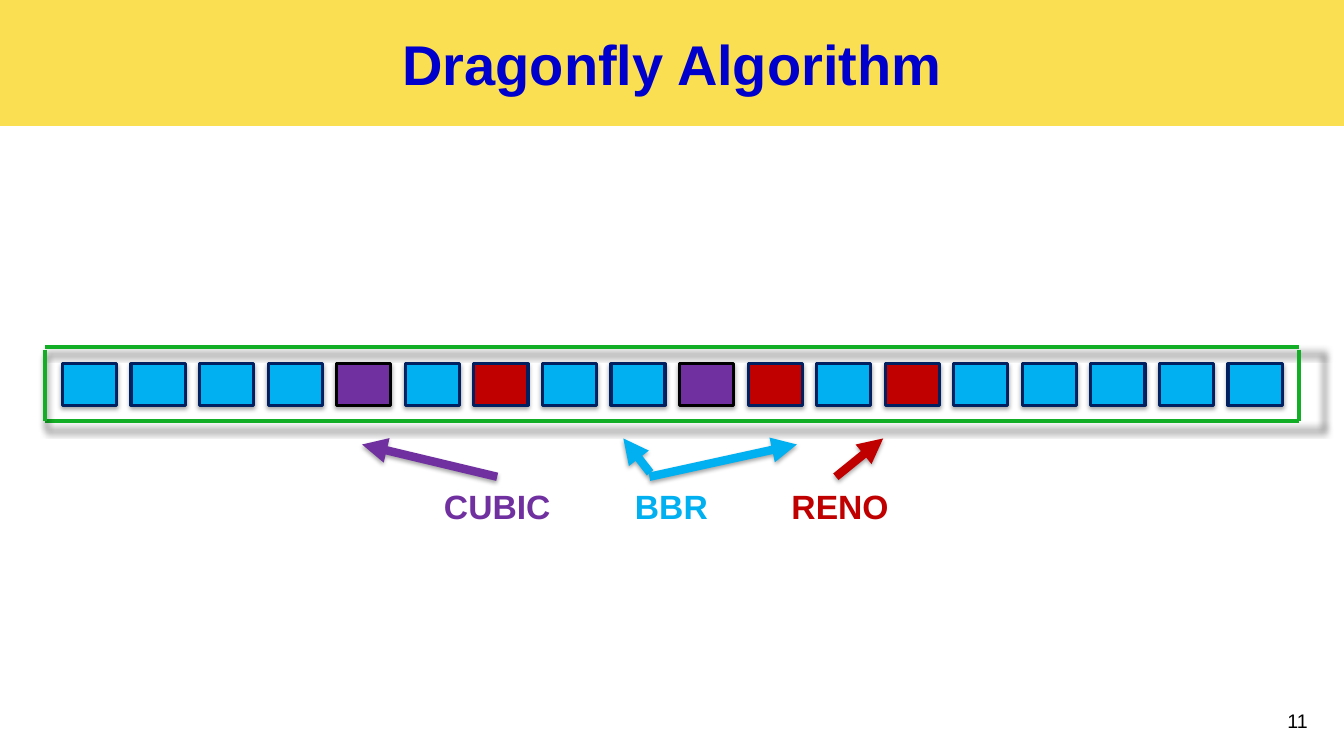
import dataclasses

import pptx
import pptx.dml.color
import pptx.enum.shapes
import pptx.enum.text
import pptx.oxml
import pptx.oxml.ns
import pptx.util


@dataclasses.dataclass(frozen=True)
class Theme:
    font: str = "Arial"
    title_size: int = 40
    label_size: int = 24
    number_size: int = 14
    banner: str = "FBDF53"
    title: str = "0000CC"
    number: str = "000000"
    frame: str = "12AE25"
    bbr: str = "00B0F0"
    cubic: str = "7030A0"
    reno: str = "C00000"
    outline: str = "002060"
    cubic_outline: str = "000000"
    frame_width: float = 3
    packet_width: float = 2.25
    arrow_width: float = 6


THEME = Theme()
SLIDE_WIDTH, SLIDE_HEIGHT = 13.33, 7.5

# One column is one packet with its gap; column 0 starts at the first packet.
GRID_LEFT, COLUMN, ROW = 0.62, 0.68, 0.5

DROP_SHADOW = ('blurRad="40000" dist="23000" dir="5400000" rotWithShape="0"', 35000)
FRAME_SHADOW = ('blurRad="63500" sx="102000" sy="102000" algn="ctr" rotWithShape="0"', 40000)


def color(code):
    return pptx.dml.color.RGBColor.from_string(code)


def x(column):
    return pptx.util.Inches(GRID_LEFT + column * COLUMN)


def width(columns):
    return pptx.util.Inches(columns * COLUMN)


def y(row):
    return pptx.util.Inches(row * ROW)


def add_shadow(shape, shadow):
    attributes, alpha = shadow
    shape.element.spPr.append(pptx.oxml.parse_xml(
        f'<a:effectLst {pptx.oxml.ns.nsdecls("a")}><a:outerShdw {attributes}>'
        f'<a:srgbClr val="000000"><a:alpha val="{alpha}"/></a:srgbClr>'
        '</a:outerShdw></a:effectLst>'))


class SlideBuilder:
    """Draws grid-placed elements on one slide in the given theme."""

    def __init__(self, slide, theme):
        self.slide = slide
        self.theme = theme

    def add_span(self, para, text, size, code, bold):
        span = para.add_run()
        span.text = text
        span.font.name = self.theme.font
        span.font.size = pptx.util.Pt(size)
        span.font.bold = bold
        span.font.color.rgb = color(code)

    def title(self, text, height):
        box = self.slide.shapes.title
        box.left, box.top = 0, 0
        box.width, box.height = pptx.util.Inches(SLIDE_WIDTH), y(height)
        box.fill.solid()
        box.fill.fore_color.rgb = color(self.theme.banner)
        frame = box.text_frame
        frame.auto_size = pptx.enum.text.MSO_AUTO_SIZE.NONE
        frame.vertical_anchor = pptx.enum.text.MSO_ANCHOR.MIDDLE
        para = frame.paragraphs[0]
        para.alignment = pptx.enum.text.PP_ALIGN.CENTER
        self.add_span(para, text, self.theme.title_size, self.theme.title, True)

    def text(self, text, place, size, code, bold=False, centered=False, spacing=None):
        column, row, columns, rows = place
        box = self.slide.shapes.add_textbox(x(column), y(row), width(columns), y(rows))
        box.text_frame.word_wrap = True
        para = box.text_frame.paragraphs[0]
        if centered:
            para.alignment = pptx.enum.text.PP_ALIGN.CENTER
        para.line_spacing = spacing
        self.add_span(para, text, size, code, bold)

    def packet(self, column, row, fill, outline):
        box = self.slide.shapes.add_shape(
            pptx.enum.shapes.MSO_SHAPE.RECTANGLE, x(column), y(row), width(0.79), y(0.82))
        box.fill.solid()
        box.fill.fore_color.rgb = color(fill)
        box.line.color.rgb = color(outline)
        box.line.width = pptx.util.Pt(self.theme.packet_width)
        add_shadow(box, DROP_SHADOW)

    def line(self, start, end, code, weight, shadow, arrow=False):
        connector = self.slide.shapes.add_connector(
            pptx.enum.shapes.MSO_CONNECTOR.STRAIGHT,
            x(start[0]), y(start[1]), x(end[0]), y(end[1]))
        connector.line.color.rgb = color(code)
        connector.line.width = pptx.util.Pt(weight)
        if arrow:
            outline = connector.element.spPr.find(pptx.oxml.ns.qn("a:ln"))
            outline.append(pptx.oxml.parse_xml(
                f'<a:tailEnd {pptx.oxml.ns.nsdecls("a")} type="triangle"/>'))
        add_shadow(connector, shadow)


def main():
    deck = pptx.Presentation()
    deck.slide_width = pptx.util.Inches(SLIDE_WIDTH)
    deck.slide_height = pptx.util.Inches(SLIDE_HEIGHT)
    builder = SlideBuilder(deck.slides.add_slide(deck.slide_layouts[5]), THEME)

    builder.title("Dragonfly Algorithm", 2.5)
    builder.text("11", (17.72, 13.96, 0.98, 1.04), THEME.number_size, THEME.number)

    left, right, top, bottom, side_top = -0.25, 18.03, 6.88, 8.36, 6.94
    for start, end in (
        ((left, top), (right, top)),
        ((left, bottom), (right, bottom)),
        ((left, side_top), (left, bottom)),
        ((right, side_top), (right, bottom)),
    ):
        builder.line(start, end, THEME.frame, THEME.frame_width, FRAME_SHADOW)

    packet_styles = {
        "B": (THEME.bbr, THEME.outline),
        "C": (THEME.cubic, THEME.cubic_outline),
        "R": (THEME.reno, THEME.outline),
    }
    for column, algorithm in enumerate("BBBBCBRBBCRBRBBBBB"):
        builder.packet(column, 7.22, *packet_styles[algorithm])

    for name, column, columns, code in (
        ("CUBIC", 5.4, 1.88, THEME.cubic),
        ("BBR", 7.79, 2.18, THEME.bbr),
        ("RENO", 10.29, 2.1, THEME.reno),
    ):
        builder.text(name, (column, 9.14, columns, 1.42), THEME.label_size, code,
                     bold=True, centered=True, spacing=1.5)

    for start, end, code in (
        ((6.34, 9.46), (4.37, 8.82), THEME.cubic),
        ((8.57, 9.38), (8.18, 8.7), THEME.bbr),
        ((8.56, 9.46), (10.71, 8.82), THEME.bbr),
        ((11.28, 9.46), (11.97, 8.7), THEME.reno),
    ):
        builder.line(start, end, code, THEME.arrow_width, DROP_SHADOW, arrow=True)

    deck.save("out.pptx")


if __name__ == "__main__":
    main()
